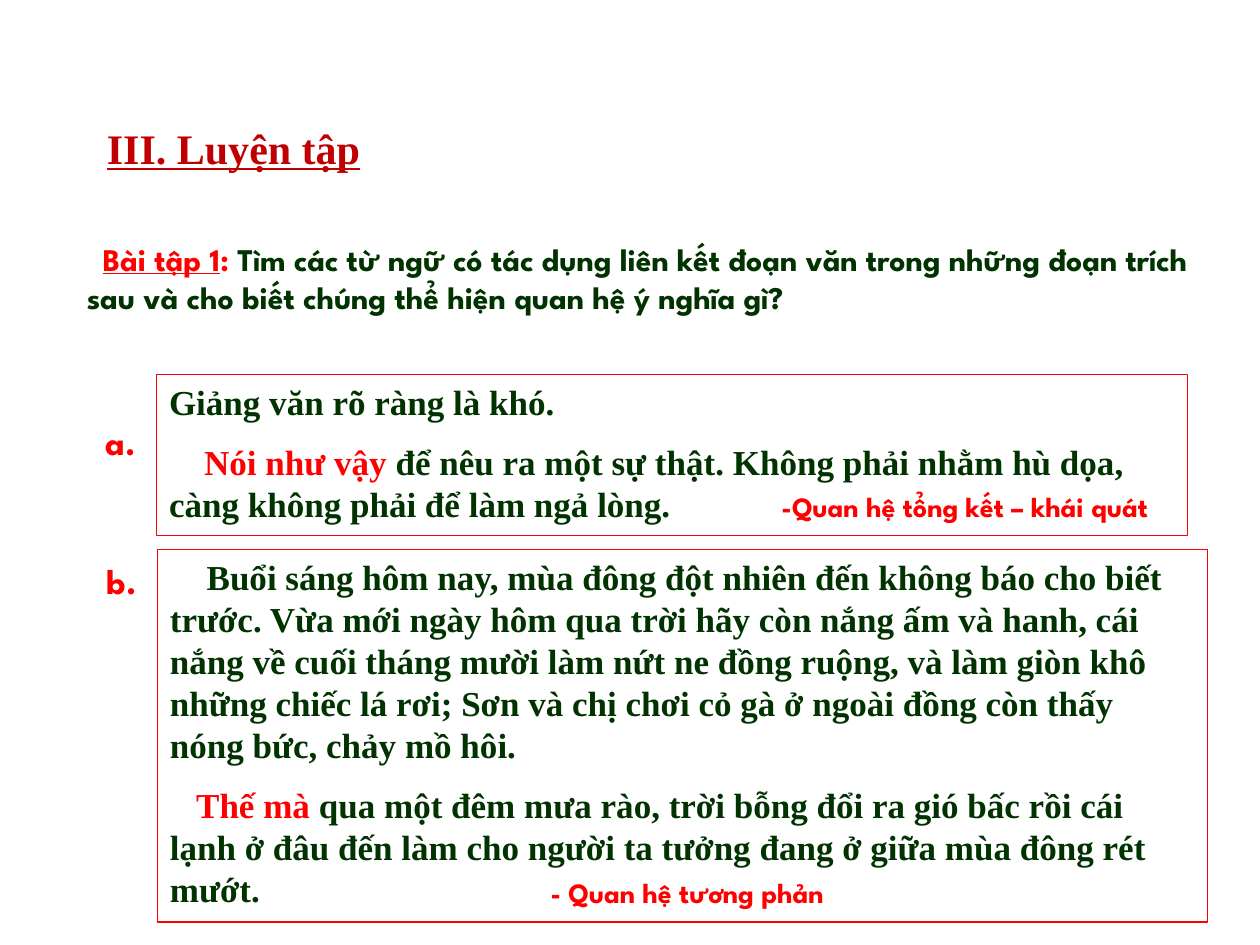
from pptx import Presentation
from pptx.dml.color import RGBColor as Rgb
from pptx.enum.shapes import MSO_SHAPE as Kind
from pptx.enum.text import MSO_ANCHOR as Anchor, PP_ALIGN as Align
from pptx.util import Pt

HUES = {"green": "003300", "red": "FF0000", "dark": "C00000", "white": "FFFFFF"}
SERIF, SANS = "Times New Roman", "League Spartan"


def hue(name):
    return Rgb.from_string(HUES[name])


def write(shape, paras, size, face):
    frame = shape.text_frame
    frame.word_wrap = True
    frame.vertical_anchor = Anchor.TOP
    for i, (indent, runs) in enumerate(paras):
        para = frame.add_paragraph() if i else frame.paragraphs[0]
        para.alignment = Align.LEFT
        para.space_before = Pt(size / 2 if i else 0)
        para.font.size, para.font.name, para.font.bold = Pt(size), face, True
        if indent:
            para._p.get_or_add_pPr().set("indent", str(Pt(indent)))
        for text, color, under in runs:
            run = para.add_run()
            run.text = text
            run.font.color.rgb = hue(color)
            if under:
                run.font.underline = True


def panel(slide, box, paras, size, face, edge):
    shape = slide.shapes.add_shape(Kind.RECTANGLE, *map(Pt, box))
    shape.shadow.inherit = False
    shape.fill.background()
    shape.line.color.rgb = hue(edge)
    shape.line.width = Pt(0.75)
    write(shape, paras, size, face)


def label(slide, box, text, size, face=SANS, color="red", under=False):
    shape = slide.shapes.add_textbox(*map(Pt, box))
    write(shape, [(0, [(text, color, under)])], size, face)


def title(slide, box):
    label(slide, box, "III. Luyện tập", 24, SERIF, "dark", True)


def task(slide, box):
    runs = [
        ("Bài tập 1", "red", True),
        (": ", "red", False),
        ("Tìm các từ ngữ có tác dụng liên kết đoạn văn trong những đoạn trích "
         "sau và cho biết chúng thể hiện quan hệ ý nghĩa gì?", "green", False),
    ]
    panel(slide, box, [(9, runs)], 18, SANS, "white")


def extract(slide, box, paras, mark, drop, answer, shift, width):
    left, top, wide, high = box
    panel(slide, box, paras, 20, SERIF, "red")
    label(slide, (left - 36, top + drop, 36, 32), mark, 20)
    label(slide, (left + shift, top + high - 30, width, 27), answer, 16)


def main():
    deck = Presentation()
    deck.slide_width, deck.slide_height = Pt(720), Pt(540)
    slide = deck.slides.add_slide(deck.slide_layouts[6])
    title(slide, (54, 66.5, 605.5, 36.5))
    task(slide, (42.5, 133.5, 660, 51))
    first = [
        (0, [("Giảng văn rõ ràng là khó.", "green", False)]),
        (20, [("Nói như vậy ", "red", False),
              ("để nêu ra một sự thật. Không phải nhằm hù dọa, càng không "
               "phải để làm ngả lòng.", "green", False)]),
    ]
    second = [
        (21, [("Buổi sáng hôm nay, mùa đông đột nhiên đến không báo cho biết "
               "trước. Vừa mới ngày hôm qua trời hãy còn nắng ấm và hanh, cái "
               "nắng về cuối tháng mười làm nứt ne đồng ruộng, và làm giòn khô "
               "những chiếc lá rơi; Sơn và chị chơi cỏ gà ở ngoài đồng còn thấy "
               "nóng bức, chảy mồ hôi.", "green", False)]),
        (15, [("Thế mà ", "red", False),
              ("qua một đêm mưa rào, trời bỗng đổi ra gió bấc rồi cái lạnh ở "
               "đâu đến làm cho người ta tưởng đang ở giữa mùa đông rét mướt.",
               "green", False)]),
    ]
    extract(slide, (89.5, 214, 589, 92), first, "a.", 23,
            "-Quan hệ tổng kết – khái quát", 350, 274)
    extract(slide, (90, 314, 600, 213), second, "b.", 2,
            "- Quan hệ tương phản", 217.5, 240)
    deck.save("out.pptx")


if __name__ == "__main__":
    main()
